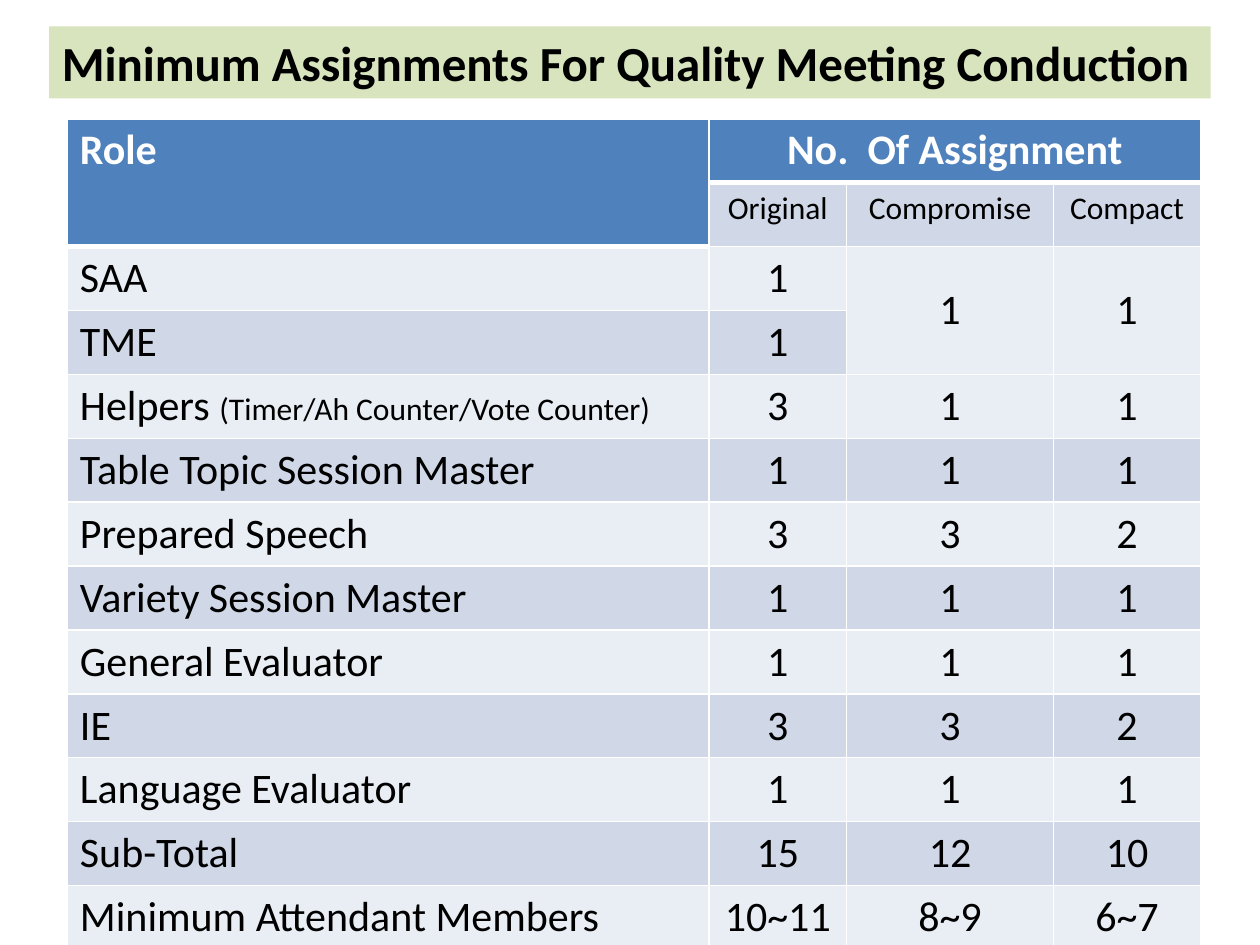
import dataclasses
import typing

import lxml.etree
import pptx
import pptx.dml.color
import pptx.enum.text
import pptx.oxml.ns
import pptx.util

Pt = pptx.util.Pt
Align = pptx.enum.text.PP_ALIGN
Anchor = pptx.enum.text.MSO_ANCHOR


@dataclasses.dataclass(frozen=True)
class Theme:
    font: str = "Calibri"
    black: str = "000000"
    white: str = "FFFFFF"
    banner: str = "D7E4BD"
    header: str = "4F81BD"
    dark_band: str = "D0D8E8"
    light_band: str = "E9EDF4"
    title_size: float = 28
    body_size: float = 24
    small_size: float = 18
    thin_line: float = 1
    thick_line: float = 3


@dataclasses.dataclass(frozen=True)
class Role:
    name: str
    counts: tuple[str, str, str]
    detail: str = ""


THEME = Theme()
COLUMN_WIDTHS = (366.6, 78.8, 118.1, 84.2)
ROW_HEIGHT = 36.5
PLANS = ("Original", "Compromise", "Compact")
ROLES = (
    Role("SAA", ("1", "1", "1")),
    Role("TME", ("1", "", "")),
    Role("Helpers ", ("3", "1", "1"), "(Timer/Ah Counter/Vote Counter)"),
    Role("Table Topic Session Master", ("1", "1", "1")),
    Role("Prepared Speech", ("3", "3", "2")),
    Role("Variety Session Master", ("1", "1", "1")),
    Role("General Evaluator", ("1", "1", "1")),
    Role("IE", ("3", "3", "2")),
    Role("Language Evaluator", ("1", "1", "1")),
    Role("Sub-Total", ("15", "12", "10")),
    Role("Minimum Attendant Members", ("10~11", "8~9", "6~7")),
)


def rgb(value: str) -> pptx.dml.color.RGBColor:
    return pptx.dml.color.RGBColor.from_string(value)


def add_run(para: typing.Any, text: str, size: float,
            color: str = THEME.black, bold: bool = False) -> None:
    span = para.add_run()
    span.text = text
    span.font.name = THEME.font
    span.font.size = Pt(size)
    span.font.bold = bold
    span.font.color.rgb = rgb(color)


def fill_cell(cell: typing.Any, color: str) -> None:
    cell.fill.solid()
    cell.fill.fore_color.rgb = rgb(color)


def write_cell(cell: typing.Any, text: str, size: float = THEME.body_size,
               color: str = THEME.black, bold: bool = False,
               align: Align = Align.LEFT, anchor: Anchor = Anchor.TOP) -> None:
    cell.vertical_anchor = anchor
    para = cell.text_frame.paragraphs[0]
    para.alignment = align
    add_run(para, text, size, color, bold)


def set_borders(cell: typing.Any, top: float, bottom: float) -> None:
    """Border lines come before the fill in the cell properties."""
    properties = cell._tc.get_or_add_tcPr()
    widths = {"a:lnL": THEME.thin_line, "a:lnR": THEME.thin_line,
              "a:lnT": top, "a:lnB": bottom}
    for index, (tag, width) in enumerate(widths.items()):
        line = lxml.etree.Element(pptx.oxml.ns.qn(tag), w=str(Pt(width)))
        solid = lxml.etree.SubElement(line, pptx.oxml.ns.qn("a:solidFill"))
        lxml.etree.SubElement(solid, pptx.oxml.ns.qn("a:srgbClr"), val=THEME.white)
        properties.insert(index, line)


def rule_width(row: int, column: int) -> float:
    """Width of the line below a cell: thick under the header cells."""
    header_end = 1 if column == 0 else 0
    return THEME.thick_line if row == header_end else THEME.thin_line


def add_title(page: typing.Any) -> None:
    box = page.shapes.title
    box.left, box.top, box.width, box.height = Pt(28.1), Pt(15.1), Pt(663.8), Pt(41.2)
    box.fill.solid()
    box.fill.fore_color.rgb = rgb(THEME.banner)
    frame = box.text_frame
    frame.word_wrap = True
    frame.auto_size = pptx.enum.text.MSO_AUTO_SIZE.NONE
    frame.vertical_anchor = Anchor.TOP
    para = frame.paragraphs[0]
    para.alignment = Align.LEFT
    add_run(para, "Minimum Assignments For Quality Meeting Conduction",
            THEME.title_size, bold=True)


def add_assignment_table(page: typing.Any) -> None:
    row_count = len(ROLES) + 2
    table = page.shapes.add_table(
        row_count, len(COLUMN_WIDTHS), Pt(38.5), Pt(67.9),
        Pt(sum(COLUMN_WIDTHS)), Pt(ROW_HEIGHT * row_count)).table
    for column, width in zip(table.columns, COLUMN_WIDTHS):
        column.width = Pt(width)
    for row in table.rows:
        row.height = Pt(ROW_HEIGHT)

    # Bands and borders
    for row in range(row_count):
        band = THEME.dark_band if row % 2 else THEME.light_band
        for column in range(len(COLUMN_WIDTHS)):
            is_header = row == 0 or (row == 1 and column == 0)
            cell = table.cell(row, column)
            fill_cell(cell, THEME.header if is_header else band)
            set_borders(cell, rule_width(row - 1, column), rule_width(row, column))

    # Merged cells
    table.cell(0, 0).merge(table.cell(1, 0))
    table.cell(0, 1).merge(table.cell(0, 3))
    for column in (2, 3):
        table.cell(2, column).merge(table.cell(3, column))

    # Two header rows
    write_cell(table.cell(0, 0), "Role", color=THEME.white, bold=True)
    write_cell(table.cell(0, 1), "No.  Of Assignment", color=THEME.white,
               bold=True, align=Align.CENTER)
    for column, plan in enumerate(PLANS, start=1):
        write_cell(table.cell(1, column), plan, THEME.small_size, align=Align.CENTER)

    # One row per role
    for row, role in enumerate(ROLES, start=2):
        name_cell = table.cell(row, 0)
        write_cell(name_cell, role.name)
        if role.detail:
            add_run(name_cell.text_frame.paragraphs[0], role.detail, THEME.small_size)
        for column, count in enumerate(role.counts, start=1):
            if count:
                write_cell(table.cell(row, column), count,
                           align=Align.CENTER, anchor=Anchor.MIDDLE)


def main() -> None:
    deck = pptx.Presentation()
    deck.slide_width, deck.slide_height = Pt(720), Pt(540)
    page = deck.slides.add_slide(deck.slide_layouts.get_by_name("Title Only"))
    add_title(page)
    add_assignment_table(page)
    deck.save("out.pptx")


if __name__ == "__main__":
    main()
